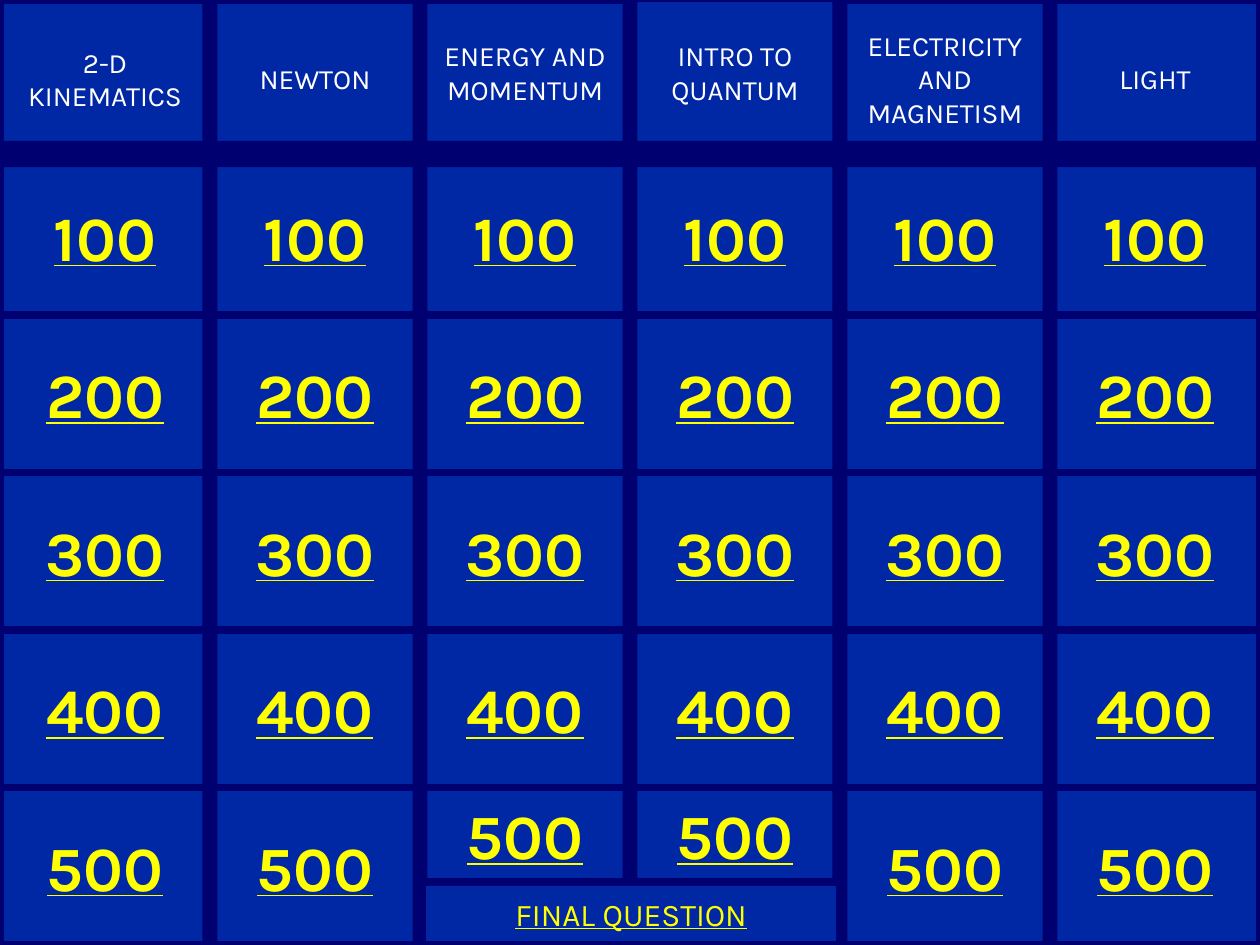
from dataclasses import dataclass

from pptx import Presentation
from pptx.dml.color import RGBColor
from pptx.enum.shapes import MSO_SHAPE as Preset
from pptx.enum.text import MSO_ANCHOR as Anchor, PP_ALIGN as Align
from pptx.shapes.autoshape import Shape
from pptx.shapes.shapetree import SlideShapes
from pptx.util import Cm, Pt

BACKGROUND = RGBColor(0x10, 0x1C, 0x8A)
CELL_BLUE = RGBColor(0x00, 0x27, 0xA4)
NAVY = RGBColor(0x00, 0x00, 0x70)
YELLOW = RGBColor(0xFF, 0xFF, 0x00)
WHITE = RGBColor(0xFF, 0xFF, 0xFF)

FONT = "Karla"
WIDTH, HEIGHT = 25.4, 19.05
COLUMN_WIDTH, ROW_HEIGHT = WIDTH / 6, HEIGHT / 6
SHORT_HEIGHT = ROW_HEIGHT * 0.6  # leaves room for the final box
DIVIDER_WIDTH = 0.3


@dataclass(frozen=True)
class Box:
    """Position and size in centimetres."""
    left: float
    top: float
    width: float
    height: float

    def lengths(self) -> tuple[Cm, Cm, Cm, Cm]:
        return Cm(self.left), Cm(self.top), Cm(self.width), Cm(self.height)


@dataclass(frozen=True)
class TextStyle:
    size: int
    color: RGBColor
    bold: bool = False
    underline: bool = False


@dataclass(frozen=True)
class Category:
    title: str
    header_top: float = 0
    header_height: float = ROW_HEIGHT
    last_height: float = ROW_HEIGHT


HEADER_STYLE = TextStyle(16, WHITE)
POINTS_STYLE = TextStyle(36, YELLOW, bold=True, underline=True)
FINAL_STYLE = TextStyle(18, YELLOW, underline=True)

POINTS = (100, 200, 300, 400, 500)
CATEGORIES = (
    Category("2-D\nKINEMATICS"),
    Category("NEWTON"),
    Category("ENERGY AND\nMOMENTUM", header_height=2.92, last_height=SHORT_HEIGHT),
    Category("INTRO TO\nQUANTUM", -0.03, 2.97, SHORT_HEIGHT),
    Category("ELECTRICITY\nAND\nMAGNETISM"),
    Category("LIGHT"),
)


def add_rectangle(shapes: SlideShapes, box: Box, fill: RGBColor, outlined: bool) -> Shape:
    shape = shapes.add_shape(Preset.RECTANGLE, *box.lengths())
    shape.shadow.inherit = False
    shape.fill.solid()
    shape.fill.fore_color.rgb = fill
    if outlined:
        shape.line.color.rgb = NAVY
        shape.line.width = Pt(4.5)
    else:
        shape.line.fill.background()
    return shape


def write_text(shape: Shape, text: str, style: TextStyle) -> None:
    text_frame = shape.text_frame
    text_frame.word_wrap = True
    text_frame.vertical_anchor = Anchor.MIDDLE
    text_frame.text = text
    for paragraph in text_frame.paragraphs:
        paragraph.alignment = Align.CENTER
        for run in paragraph.runs:
            run.font.name = FONT
            run.font.size = Pt(style.size)
            run.font.color.rgb = style.color
            run.font.bold = style.bold
            run.font.underline = style.underline


def add_cell(shapes: SlideShapes, box: Box, text: str, style: TextStyle) -> None:
    write_text(add_rectangle(shapes, box, CELL_BLUE, outlined=True), text, style)


def add_category(shapes: SlideShapes, column: int, category: Category) -> None:
    left = column * COLUMN_WIDTH
    for row, points in enumerate(POINTS, start=1):
        height = category.last_height if row == len(POINTS) else ROW_HEIGHT
        box = Box(left, row * ROW_HEIGHT, COLUMN_WIDTH, height)
        add_cell(shapes, box, str(points), POINTS_STYLE)
    header = Box(left, category.header_top, COLUMN_WIDTH, category.header_height)
    add_cell(shapes, header, category.title, HEADER_STYLE)


def main() -> None:
    presentation = Presentation()
    presentation.slide_width = Cm(WIDTH)
    presentation.slide_height = Cm(HEIGHT)
    slide = presentation.slides.add_slide(presentation.slide_layouts[6])
    slide.background.fill.solid()
    slide.background.fill.fore_color.rgb = BACKGROUND
    shapes = slide.shapes

    # Game board
    for column, category in enumerate(CATEGORIES):
        add_category(shapes, column, category)

    # Dividers between the columns and below the headers
    for column in range(1, len(CATEGORIES)):
        left = column * COLUMN_WIDTH - DIVIDER_WIDTH / 2
        add_rectangle(shapes, Box(left, 0, DIVIDER_WIDTH, HEIGHT), NAVY, outlined=False)
    add_rectangle(shapes, Box(0, 2.84, WIDTH, 0.53), NAVY, outlined=False)

    # Final round
    add_rectangle(shapes, Box(8.51, 17.78, 8.43, 1.27), CELL_BLUE, outlined=True)
    final_label = shapes.add_textbox(*Box(8.66, 18.19, 8.13, 0.48).lengths())
    write_text(final_label, "FINAL QUESTION", FINAL_STYLE)

    presentation.save("out.pptx")


if __name__ == "__main__":
    main()
